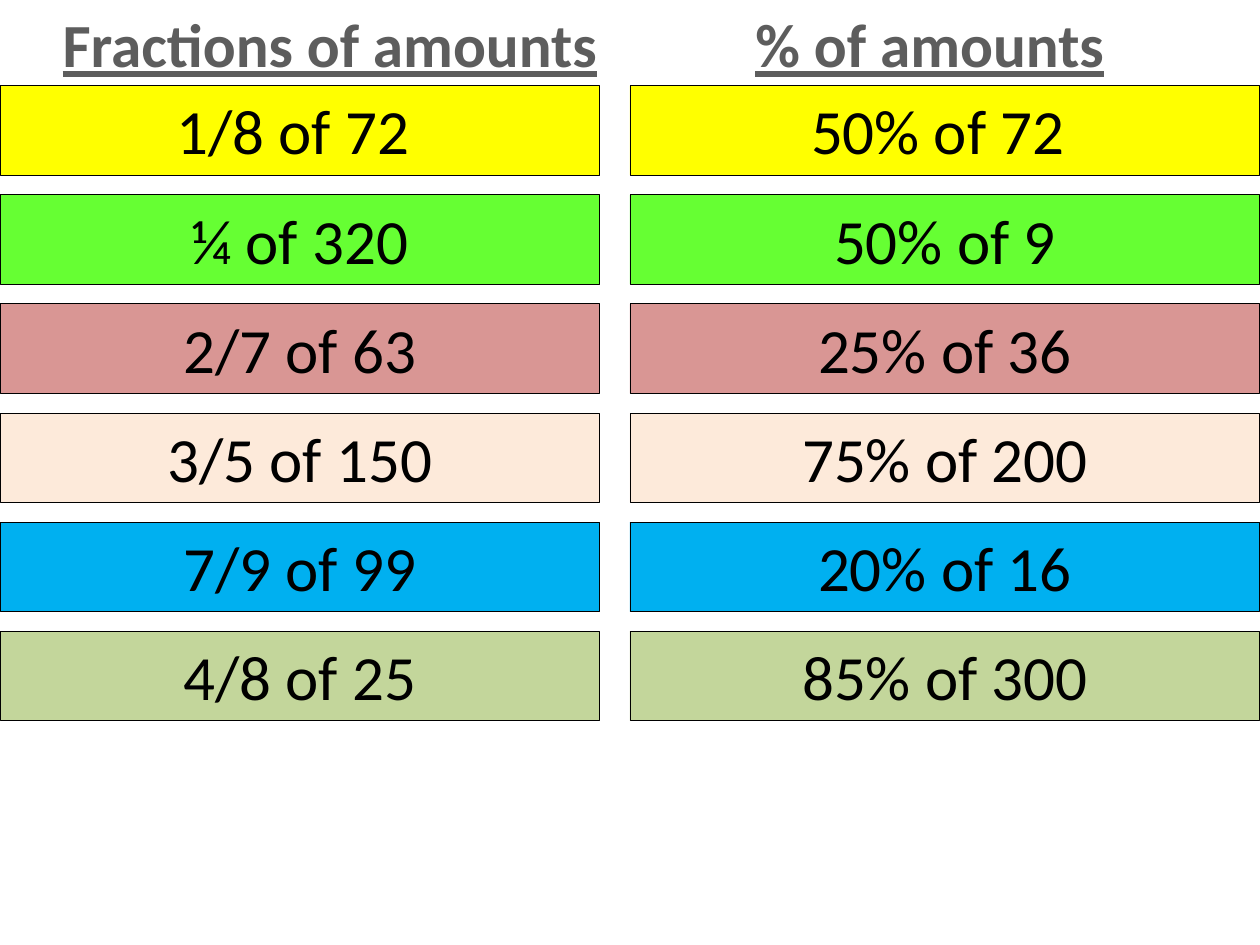
from pptx import Presentation
from pptx.dml.color import RGBColor
from pptx.enum import shapes, text
from pptx.util import Inches, Pt

# Content: heading, heading left, box left, box width, questions
COLUMNS = [
    ("Fractions of amounts", 0, 0, 4.76,
     ["1/8 of 72 ", "¼ of 320", "2/7 of 63", "3/5 of 150", "7/9 of 99", "4/8 of 25"]),
    ("% of amounts", 4.76, 5, 5,
     ["50% of 72 ", "50% of 9", "25% of 36", "75% of 200", "20% of 16", "85% of 300"]),
]
ROW_COLORS = ["yellow", "green", "rose", "peach", "blue", "olive"]
COLORS = {
    "heading": "5D5D5D", "ink": "000000",
    "yellow": "FFFF00", "green": "66FF33", "rose": "D99694",
    "peach": "FDEADA", "blue": "00B0F0", "olive": "C3D69B",
}
HEADING_W, HEADING_H = 5.24, 0.69
ROW_TOP, ROW_STEP, ROW_H = 0.68, 0.866, 0.71


def rgb(name):
    return RGBColor.from_string(COLORS[name])


def write(sp, words, size, color):
    tf = sp.text_frame
    tf.word_wrap = True
    tf.vertical_anchor = text.MSO_ANCHOR.TOP
    p = tf.paragraphs[0]
    p.text = words
    p.alignment = text.PP_ALIGN.CENTER
    p.font.name = "Calibri"
    p.font.size = Pt(size)
    p.font.color.rgb = rgb(color)
    return p


prs = Presentation()
prs.slide_width, prs.slide_height = Inches(10), Inches(7.5)
s = prs.slides.add_slide(prs.slide_layouts[6])

for heading, heading_left, left, width, questions in COLUMNS:
    # Column heading
    sp = s.shapes.add_textbox(Inches(heading_left), 0, Inches(HEADING_W), Inches(HEADING_H))
    p = write(sp, heading, 35, "heading")
    p.font.bold = p.font.underline = True

    # Question boxes, one colour per row
    for row, (question, fill) in enumerate(zip(questions, ROW_COLORS)):
        sp = s.shapes.add_shape(
            shapes.MSO_SHAPE.RECTANGLE, Inches(left), Inches(ROW_TOP + row * ROW_STEP),
            Inches(width), Inches(ROW_H))
        sp.shadow.inherit = False
        sp.fill.solid()
        sp.fill.fore_color.rgb = rgb(fill)
        sp.line.color.rgb = rgb("ink")
        sp.line.width = Pt(0.5)
        write(sp, question, 36, "ink")

prs.save("out.pptx")
